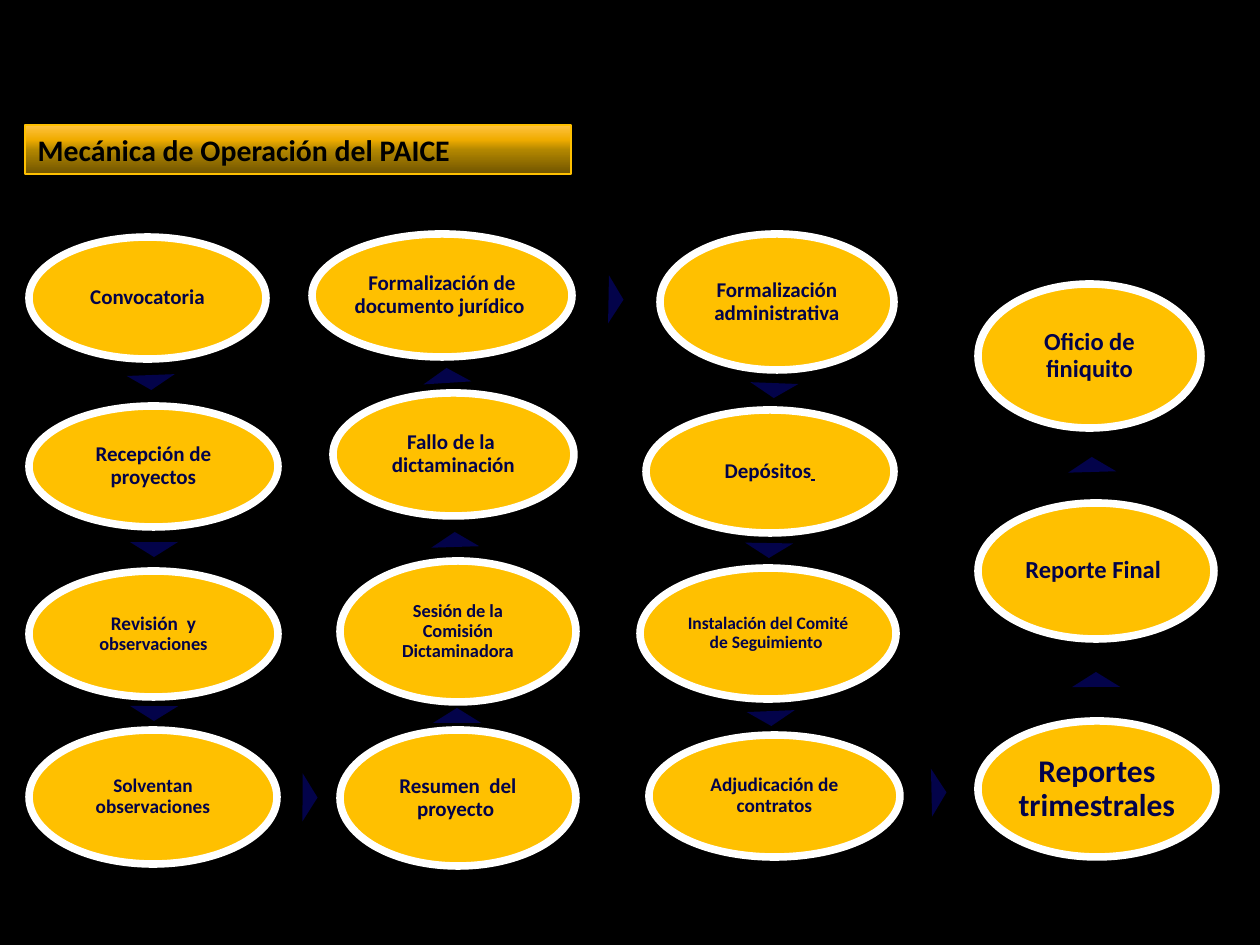
from copy import deepcopy

from pptx import Presentation
from pptx.dml.color import RGBColor
from pptx.enum.shapes import MSO_SHAPE
from pptx.enum.text import MSO_ANCHOR, MSO_AUTO_SIZE, PP_ALIGN
from pptx.util import Pt

PX = 914400 / 126
ELLIPSE = MSO_SHAPE.OVAL
TRIANGLE = MSO_SHAPE.ISOSCELES_TRIANGLE
MIDDLE = MSO_ANCHOR.MIDDLE
CENTER = PP_ALIGN.CENTER
LEFT = PP_ALIGN.LEFT
NO_AUTO_SIZE = MSO_AUTO_SIZE.NONE

BLACK = RGBColor(0x00, 0x00, 0x00)
WHITE = RGBColor(0xFF, 0xFF, 0xFF)
AMBER = RGBColor(0xFF, 0xC0, 0x00)
NAVY = RGBColor(0x03, 0x03, 0x4A)
BAR_STOPS = [
    (0, RGBColor(0x70, 0x54, 0x00)),
    (0.5, RGBColor(0xB4, 0x88, 0x00)),
    (0.7, RGBColor(0xF0, 0xAC, 0x00)),
    (1, RGBColor(0xFF, 0xC3, 0x42)),
]


def px(*lengths):
    return [round(length * PX) for length in lengths]


def set_font(paragraph, size, color):
    paragraph.font.name = "Calibri"
    paragraph.font.size = Pt(size)
    paragraph.font.bold = True
    paragraph.font.color.rgb = color


presentation = Presentation()
presentation.slide_width, presentation.slide_height = px(1260, 945)
slide = presentation.slides.add_slide(presentation.slide_layouts[5])
slide.background.fill.solid()
slide.background.fill.fore_color.rgb = BLACK

title = slide.shapes.title
title.left, title.top, title.width, title.height = px(25, 125, 546, 49)
title.fill.gradient()
title.fill.gradient_angle = 90
stop_list = title.fill.gradient_stops[0]._gs.getparent()
for _ in BAR_STOPS[2:]:
    stop_list.append(deepcopy(stop_list[0]))
for stop, (position, color) in zip(title.fill.gradient_stops, BAR_STOPS):
    stop.position = position
    stop.color.rgb = color
title.line.color.rgb = AMBER
title.line.width = Pt(0.75)
title.text_frame.text = "Mecánica de Operación del PAICE"
title.text_frame.auto_size = NO_AUTO_SIZE
title.text_frame.vertical_anchor = MIDDLE
title_paragraph = title.text_frame.paragraphs[0]
title_paragraph.alignment = LEFT
set_font(title_paragraph, 17, BLACK)

steps = [
    (29, 237, 237, 122, 12, "Convocatoria"),
    (29, 406, 249, 121, 12, "Recepción de proyectos"),
    (29, 571, 249, 126, 11, "Revisión  y "),
    (29, 730, 248, 134, 11, "Solventan observaciones"),
    (340, 730, 236, 136, 12, "Resumen  del proyecto "),
    (340, 561, 236, 141, 10.5, "Sesión de la Comisión Dictaminadora"),
    (333, 393, 241, 123, 12, "Fallo de la  dictaminación"),
    (312, 234, 260, 123, 12, "Formalización de documento jurídico "),
    (660, 234, 234, 136, 12, "Formalización administrativa"),
    (646, 410, 248, 123, 12, "Depósitos"),
    (640, 568, 256, 131, 10, "Instalación del Comité de Seguimiento "),
    (649, 735, 251, 122, 11, "Adjudicación de contratos"),
    (978, 721, 238, 136, 18, "Reportes trimestrales"),
    (978, 503, 236, 136, 14, "Reporte Final "),
    (978, 284, 223, 144, 14, "Oficio de finiquito"),
]
step_paragraphs = {}
for left, top, width, height, size, text in steps:
    step = slide.shapes.add_shape(ELLIPSE, *px(left, top, width, height))
    step.shadow.inherit = False
    step.fill.solid()
    step.fill.fore_color.rgb = AMBER
    step.line.color.rgb = WHITE
    step.line.width = Pt(4.33)
    frame = step.text_frame
    frame.word_wrap = True
    frame.vertical_anchor = MIDDLE
    frame.margin_left, frame.margin_top, frame.margin_right, frame.margin_bottom = px(2, 2, 2, 2)
    paragraph = frame.paragraphs[0]
    paragraph.alignment = CENTER
    paragraph.line_spacing = 0.9
    set_font(paragraph, size, NAVY)
    paragraph.add_run().text = text
    step_paragraphs[text] = paragraph

review_run = step_paragraphs["Revisión  y "].add_run()
review_run.text = "observaciones"
review_run.font.size = Pt(10.5)

deposit_run = step_paragraphs["Depósitos"].add_run()
deposit_run.text = " "
deposit_run.font.size = Pt(10)
deposit_run.font.bold = False
deposit_run.font.underline = True

arrows = [
    (127, 375, 177.8),
    (130, 542, 179.9),
    (130, 706, 180.2),
    (286, 790, 90.3),
    (433, 708, 359.9),
    (431, 532, 358.2),
    (423, 368, 356.4),
    (592, 292, 91.1),
    (750, 383, 182.2),
    (745, 543, 180.9),
    (747, 711, 177.7),
    (915, 785, 88.7),
    (1072, 672, 359.7),
    (1068, 457, 358.3),
]
for left, top, rotation in arrows:
    arrow = slide.shapes.add_shape(TRIANGLE, *px(left, top, 48, 15))
    arrow.shadow.inherit = False
    arrow.rotation = rotation
    arrow.fill.solid()
    arrow.fill.fore_color.rgb = NAVY
    arrow.line.fill.background()

presentation.save("out.pptx")
